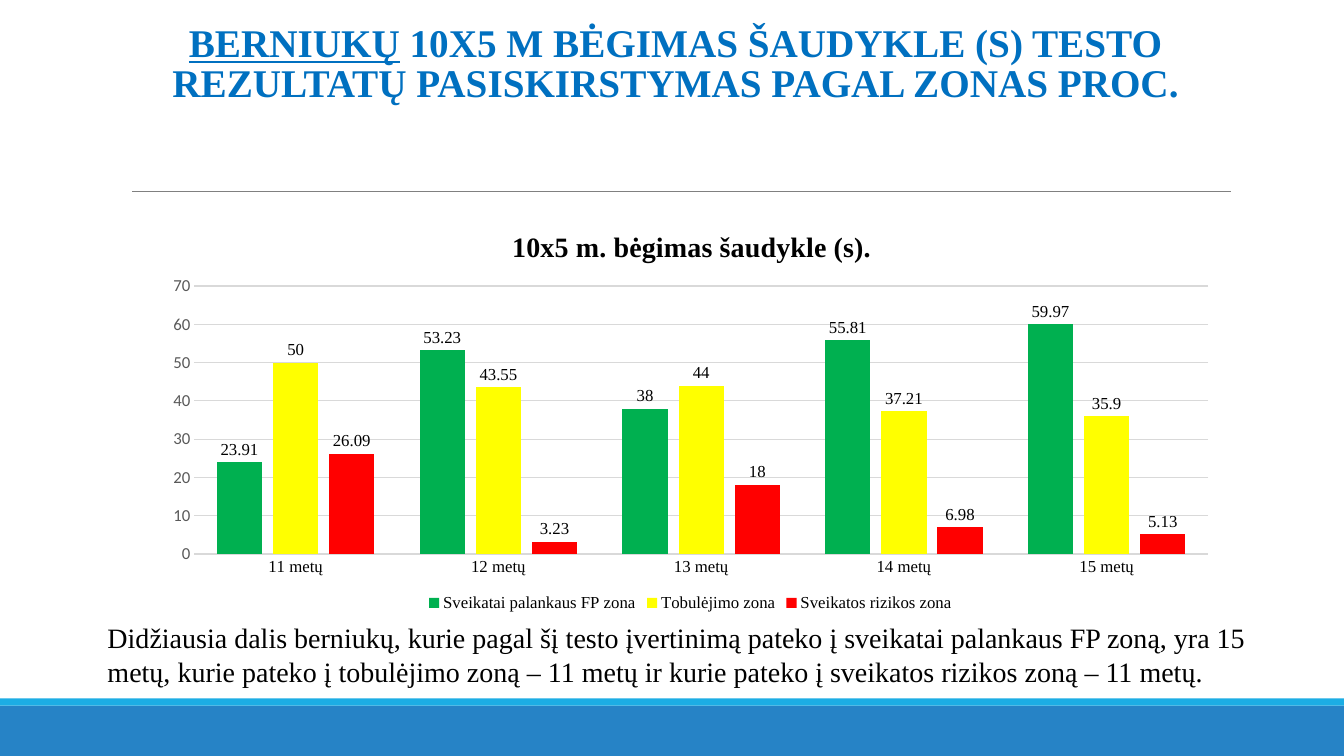
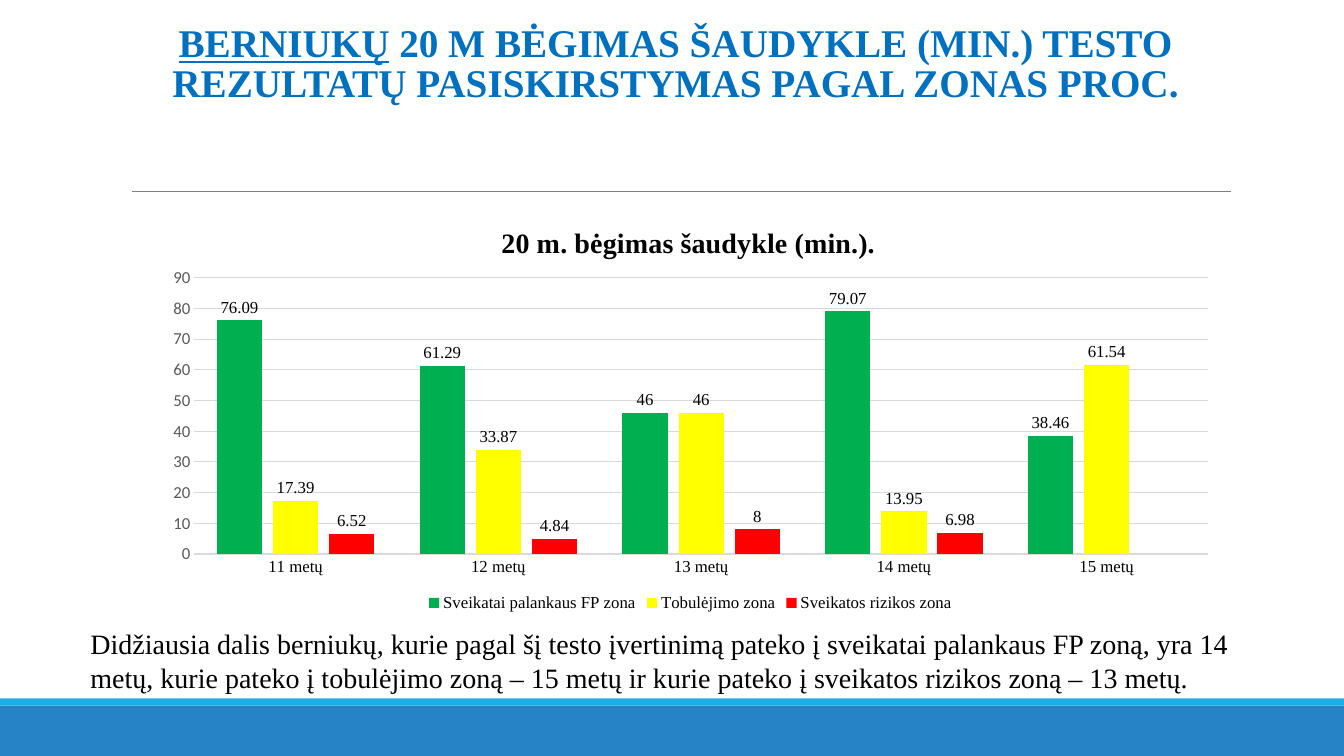
from dataclasses import dataclass

from lxml import etree
from pptx import Presentation
from pptx import util as u
from pptx.chart.data import CategoryChartData
from pptx.dml.color import RGBColor
from pptx.enum import chart as ch
from pptx.enum import shapes, text
from pptx.oxml.ns import qn


@dataclass(frozen=True)
class Theme:
    title: str = "0070C0"
    band: str = "2683C6"
    accent: str = "1CADE4"
    rule: str = "808080"
    ink: str = "000000"
    axis_ink: str = "595959"
    grid: str = "D9D9D9"
    zones: tuple = ("00B050", "FFFF00", "FF0000")
    serif: str = "Times New Roman"
    sans: str = "Calibri"
    title_size: int = 28
    chart_title_size: int = 20
    comment_size: int = 20
    label_size: int = 12


@dataclass(frozen=True)
class Box:
    left: float
    top: float
    width: float
    height: float

    def lengths(self):
        return [u.Cm(v) for v in (self.left, self.top, self.width, self.height)]


THEME = Theme()
PAGE = Box(0, 0, 33.87, 19.05)
TITLE = Box(3.05, 0.79, 27.94, 4.04)
CHART = Box(3.81, 5.13, 27.18, 10.39)

AGES = [f"{age} metų" for age in range(11, 16)]
ZONES = ["Sveikatai palankaus FP zona", "Tobulėjimo zona", "Sveikatos rizikos zona"]

# Chart positions (title_at, plot_at) are fractions of the chart box
TESTS = [
    dict(
        test=" 10X5 M BĖGIMAS ŠAUDYKLE (S) TESTO ",
        chart_title="10x5 m. bėgimas šaudykle (s).",
        title_at=(0.33, 0.05), plot_at=(0.04, 0.2, 0.94, 0.65), top_value=70,
        shares=[[23.91, 53.23, 38, 55.81, 59.97],
                [50, 43.55, 44, 37.21, 35.9],
                [26.09, 3.23, 18, 6.98, 5.13]],
        best_ages=(15, 11, 11), comment_box=Box(2.46, 15.52, 29.87, 1.96)),
    dict(
        test=" 20 M BĖGIMAS ŠAUDYKLE (MIN.) TESTO ",
        chart_title="20 m. bėgimas šaudykle (min.).",
        title_at=(0.32, 0.04), plot_at=(0.04, 0.18, 0.94, 0.67), top_value=90,
        shares=[[76.09, 61.29, 46, 79.07, 38.46],
                [17.39, 33.87, 46, 13.95, 61.54],
                [6.52, 4.84, 8, 6.98, None]],
        best_ages=(14, 15, 13), comment_box=Box(2.03, 15.67, 30, 1.96)),
]


def rgb(code):
    return RGBColor.from_string(code)


def style_font(font, size, color=THEME.ink, face=THEME.serif, bold=False):
    font.size, font.name, font.bold = u.Pt(size), face, bold
    font.color.rgb = rgb(color)


def add_run(paragraph, words, *style, **options):
    run = paragraph.add_run()
    run.text = words
    style_font(run.font, *style, **options)
    return run


def place_manually(part, index, position, inner=False):
    """Fix a chart part at fractions of the chart box."""
    for old in part.findall(qn("c:layout")):
        part.remove(old)
    layout = etree.Element(qn("c:layout"))
    manual = etree.SubElement(layout, qn("c:manualLayout"))
    settings = [("layoutTarget", "inner")] if inner else []
    settings += [("xMode", "edge"), ("yMode", "edge")]
    settings += zip("xywh", position)
    for tag, value in settings:
        etree.SubElement(manual, qn(f"c:{tag}")).set("val", str(value))
    part.insert(index, layout)


def furnish_layout(layout, slide, page):
    """Draw the shared bands and rule, then hand them to the layout."""
    parts = []
    bands = [(17.78, 1.27, THEME.band), (17.6, 0.18, THEME.accent)]
    for top, height, color in bands:
        band = slide.shapes.add_shape(
            shapes.MSO_SHAPE.RECTANGLE,
            *Box(page.left, page.top + top, page.width, height).lengths())
        band.shadow.inherit = False
        band.fill.solid()
        band.fill.fore_color.rgb = rgb(color)
        band.line.fill.background()
        parts.append(band)

    rule_y = u.Cm(page.top + 4.83)
    rule = slide.shapes.add_connector(
        shapes.MSO_CONNECTOR.STRAIGHT,
        u.Cm(page.left + 3.33), rule_y, u.Cm(page.left + 31.01), rule_y)
    rule.line.color.rgb = rgb(THEME.rule)
    rule.line.width = u.Pt(0.5)
    etree.SubElement(rule.element.spPr, qn("a:effectLst"))
    parts.append(rule)

    for part in parts:
        layout.shapes.element.append(part.element)


def fill_title(slide, box, test):
    title = slide.shapes.title
    title.left, title.top, title.width, title.height = box.lengths()
    frame = title.text_frame
    frame.word_wrap = True
    frame.auto_size = text.MSO_AUTO_SIZE.NONE
    frame.vertical_anchor = text.MSO_ANCHOR.BOTTOM
    frame.margin_top, frame.margin_bottom = 0, u.Cm(2.17)
    heading = frame.paragraphs[0]
    heading.alignment = text.PP_ALIGN.CENTER
    heading.line_spacing = 0.85
    style = (THEME.title_size, THEME.title)
    add_run(heading, "BERNIUKŲ", *style, bold=True).font.underline = True
    rest = test + "REZULTATŲ PASISKIRSTYMAS PAGAL ZONAS PROC."
    add_run(heading, rest, *style, bold=True).font.underline = False


def add_zone_chart(slide, box, chart_title, title_at, plot_at, top_value, shares):
    data = CategoryChartData()
    data.categories = AGES
    for zone, values in zip(ZONES, shares):
        data.add_series(zone, values)
    chart = slide.shapes.add_chart(
        ch.XL_CHART_TYPE.COLUMN_CLUSTERED, *box.lengths(), data).chart
    style_font(chart.font, 10, face=THEME.sans)

    # Title and legend
    chart.has_title = True
    caption = chart.chart_title.text_frame.paragraphs[0]
    add_run(caption, chart_title, THEME.chart_title_size, bold=True)
    place_manually(chart.chart_title.element, 1, title_at)
    chart.has_legend = True
    chart.legend.position = ch.XL_LEGEND_POSITION.BOTTOM
    chart.legend.include_in_layout = False
    style_font(chart.legend.font, THEME.label_size)

    # Axes
    ages, percent = chart.category_axis, chart.value_axis
    for axis in (ages, percent):
        axis.major_tick_mark = axis.minor_tick_mark = ch.XL_TICK_MARK.NONE
    style_font(ages.tick_labels.font, THEME.label_size)
    ages.format.line.color.rgb = rgb(THEME.grid)
    ages.format.line.width = u.Pt(1)
    style_font(percent.tick_labels.font, THEME.label_size, THEME.axis_ink, THEME.sans)
    percent.format.line.fill.background()
    percent.minimum_scale, percent.maximum_scale = 0, top_value
    percent.major_unit = 10
    gridline = percent.major_gridlines.format.line
    gridline.color.rgb = rgb(THEME.grid)
    gridline.width = u.Pt(0.75)

    # Columns and their labels
    plot = chart.plots[0]
    plot.gap_width, plot.overlap = 100, -24
    plot.vary_by_categories = False
    for zone, color in zip(plot.series, THEME.zones):
        zone.format.fill.solid()
        zone.format.fill.fore_color.rgb = rgb(color)
        labels = zone.data_labels
        labels.show_value = True
        labels.position = ch.XL_LABEL_POSITION.OUTSIDE_END
        style_font(labels.font, THEME.label_size)
    place_manually(chart.element.xpath("c:chart/c:plotArea")[0], 0, plot_at, inner=True)


def add_comment(slide, box, best_ages):
    healthy, improving, at_risk = best_ages
    frame = slide.shapes.add_textbox(*box.lengths()).text_frame
    frame.word_wrap = True
    frame.auto_size = text.MSO_AUTO_SIZE.SHAPE_TO_FIT_TEXT
    add_run(
        frame.paragraphs[0],
        "Didžiausia dalis berniukų, kurie pagal šį testo įvertinimą pateko į "
        f"sveikatai palankaus FP zoną, yra {healthy} metų, kurie pateko į "
        f"tobulėjimo zoną – {improving} metų ir kurie pateko į sveikatos "
        f"rizikos zoną – {at_risk} metų.",
        THEME.comment_size)


def build_test_slide(slide, test, best_ages, comment_box, **chart_parts):
    fill_title(slide, TITLE, test)
    add_zone_chart(slide, CHART, **chart_parts)
    add_comment(slide, comment_box, best_ages)


def main():
    deck = Presentation()
    deck.slide_width, deck.slide_height = PAGE.lengths()[2:]
    layout = deck.slide_layouts.get_by_name("Title Only")
    slides = [deck.slides.add_slide(layout) for _ in TESTS]
    furnish_layout(layout, slides[0], PAGE)
    for slide, content in zip(slides, TESTS):
        build_test_slide(slide, **content)
    deck.save("out.pptx")


if __name__ == "__main__":
    main()
